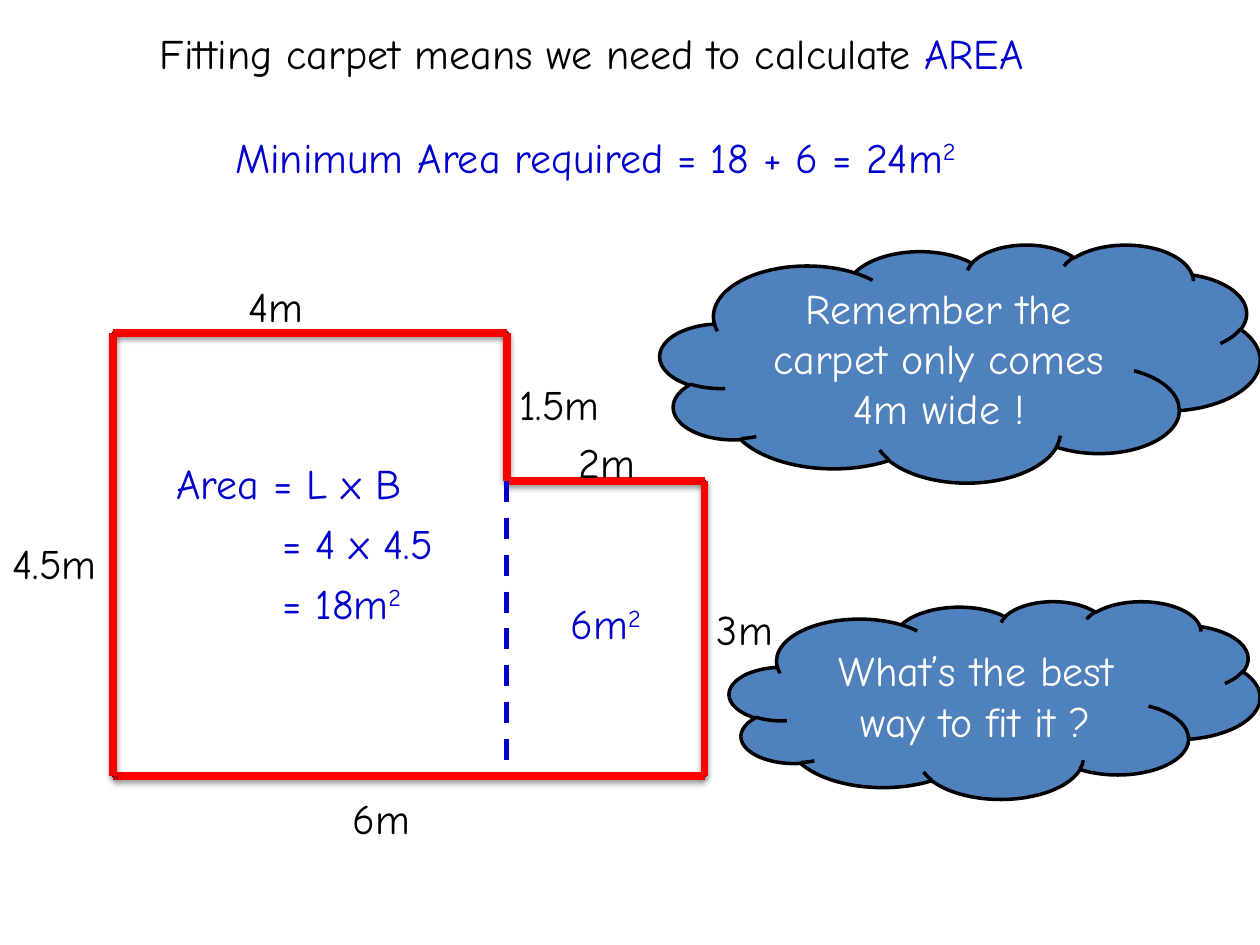
"""Build the carpet area slide: a room plan with its sizes, sums and two hints."""
from itertools import pairwise
from lxml.etree import SubElement
from pptx import Presentation
from pptx.dml.color import RGBColor
from pptx.enum.dml import MSO_LINE as Dash
from pptx.enum.shapes import MSO_CONNECTOR as Link, MSO_SHAPE as Shape
from pptx.enum.text import MSO_ANCHOR as Anchor, MSO_AUTO_SIZE as Fit, PP_ALIGN as Align
from pptx.oxml.ns import qn
from pptx.util import Pt

BLACK = RGBColor(0x00, 0x00, 0x00)
WHITE = RGBColor(0xFF, 0xFF, 0xFF)
RED = RGBColor(0xFF, 0x00, 0x00)
INK = RGBColor(0x00, 0x00, 0xCC)
SKY = RGBColor(0x4F, 0x81, 0xBD)
FONT, SIZE = "Comic Neue", 24
HIGH = 36.3

TITLE = [("Fitting carpet means we need to calculate ", BLACK), ("AREA", INK)]
TITLE_BOX = (84.2, 12.2, 558, HIGH)

LEFT, NOTCH, RIGHT = 64.8, 289.6, 402.6
TOP, STEP, BASE = 190.2, 275, 443.6
ROOM = [(LEFT, TOP), (NOTCH, TOP), (NOTCH, STEP), (RIGHT, STEP),
        (RIGHT, BASE), (LEFT, BASE), (LEFT, TOP)]

SIDES = [
    ("4m", 134.8, 157, 55.4),
    ("4.5m", 0, 303.3, 71.3),
    ("6m", 194.4, 449.4, 67),
    ("1.5m", 289.6, 213, 79.2),
    ("2m", 323.5, 245.8, 61.9),
    ("3m", 402.6, 341.5, 51.1),
]
SUMS = [
    ("Area = L x B", "", 93.6, 258, 153.4),
    ("= 4 x 4.5", "", 154.1, 292.2, 113),
    ("= 18m", "2", 154.1, 326.3, 88.6),
    ("6m", "2", 319, 338, 58.3),
    ("Minimum Area required = 18 + 6 = 24m", "2", 127.4, 71.5, 456.5),
]
CLOUDS = [
    (["Remember the", "carpet only comes 4m wide !"], (377.2, 139.6, 342.8, 136)),
    (["What’s the best way to fit it ?"], (416.8, 343.5, 303.2, 113)),
]


def add_run(para, text, color, raised=False):
    run = para.add_run()
    run.text = text
    font = run.font
    font.name, font.size, font.bold = FONT, Pt(SIZE), False
    font.color.rgb = color
    if raised:
        run._r.get_or_add_rPr().set("baseline", "30000")


def add_label(slide, box, text, color, power="", wrap=False):
    frame = slide.shapes.add_textbox(*map(Pt, box)).text_frame
    frame.word_wrap = wrap
    frame.auto_size = Fit.SHAPE_TO_FIT_TEXT
    add_run(frame.paragraphs[0], text, color)
    if power:
        add_run(frame.paragraphs[0], power, color, True)


def add_line(slide, start, end, color, width):
    line = slide.shapes.add_connector(Link.STRAIGHT, *map(Pt, start + end))
    line.line.color.rgb, line.line.width = color, Pt(width)
    return line, SubElement(line._element.spPr, qn("a:effectLst"))


def add_wall(slide, start, end):
    effects = add_line(slide, start, end, RED, 4.5)[1]
    shade = SubElement(effects, qn("a:outerShdw"), blurRad=str(Pt(3.1)),
                       dist=str(Pt(1.6)), dir="5400000", rotWithShape="0")
    tint = SubElement(shade, qn("a:srgbClr"), val="000000")
    SubElement(tint, qn("a:alpha"), val="38000")


def add_room(slide):
    points = [(Pt(x), Pt(y)) for x, y in ROOM]
    pen = slide.shapes.build_freeform(*points[0])
    pen.add_line_segments(points[1:], close=True)
    room = pen.convert_to_shape()
    room.shadow.inherit = False
    room.fill.background()
    room.line.color.rgb, room.line.width = BLACK, Pt(2)
    for start, end in pairwise(ROOM):
        add_wall(slide, start, end)


def add_cloud(slide, lines, box):
    cloud = slide.shapes.add_shape(Shape.CLOUD, *map(Pt, box))
    cloud.shadow.inherit = False
    cloud.fill.solid()
    cloud.fill.fore_color.rgb = SKY
    cloud.line.color.rgb, cloud.line.width = BLACK, Pt(2)
    frame = cloud.text_frame
    frame.word_wrap, frame.vertical_anchor = True, Anchor.MIDDLE
    for i, text in enumerate(lines):
        para = frame.add_paragraph() if i else frame.paragraphs[0]
        para.alignment = Align.CENTER
        add_run(para, text, WHITE)


def add_title(slide):
    title = slide.shapes.title
    title.left, title.top, title.width, title.height = map(Pt, TITLE_BOX)
    frame = title.text_frame
    frame.word_wrap, frame.vertical_anchor = False, Anchor.TOP
    frame.auto_size = Fit.SHAPE_TO_FIT_TEXT
    frame.paragraphs[0].alignment = Align.LEFT
    for text, color in TITLE:
        add_run(frame.paragraphs[0], text, color)


def main():
    deck = Presentation()
    deck.slide_width, deck.slide_height = Pt(720), Pt(540)
    slide = deck.slides.add_slide(deck.slide_layouts[5])
    add_title(slide)
    add_room(slide)
    for text, x, y, wide in SIDES:
        add_label(slide, (x, y, wide, HIGH), text, BLACK, wrap=True)
    split = add_line(slide, (NOTCH, STEP), (NOTCH, 440), INK, 3)[0]
    split.line.dash_style = Dash.DASH
    for text, power, x, y, wide in SUMS:
        add_label(slide, (x, y, wide, HIGH), text, INK, power)
    for lines, box in CLOUDS:
        add_cloud(slide, lines, box)
    deck.save("out.pptx")


if __name__ == "__main__":
    main()
